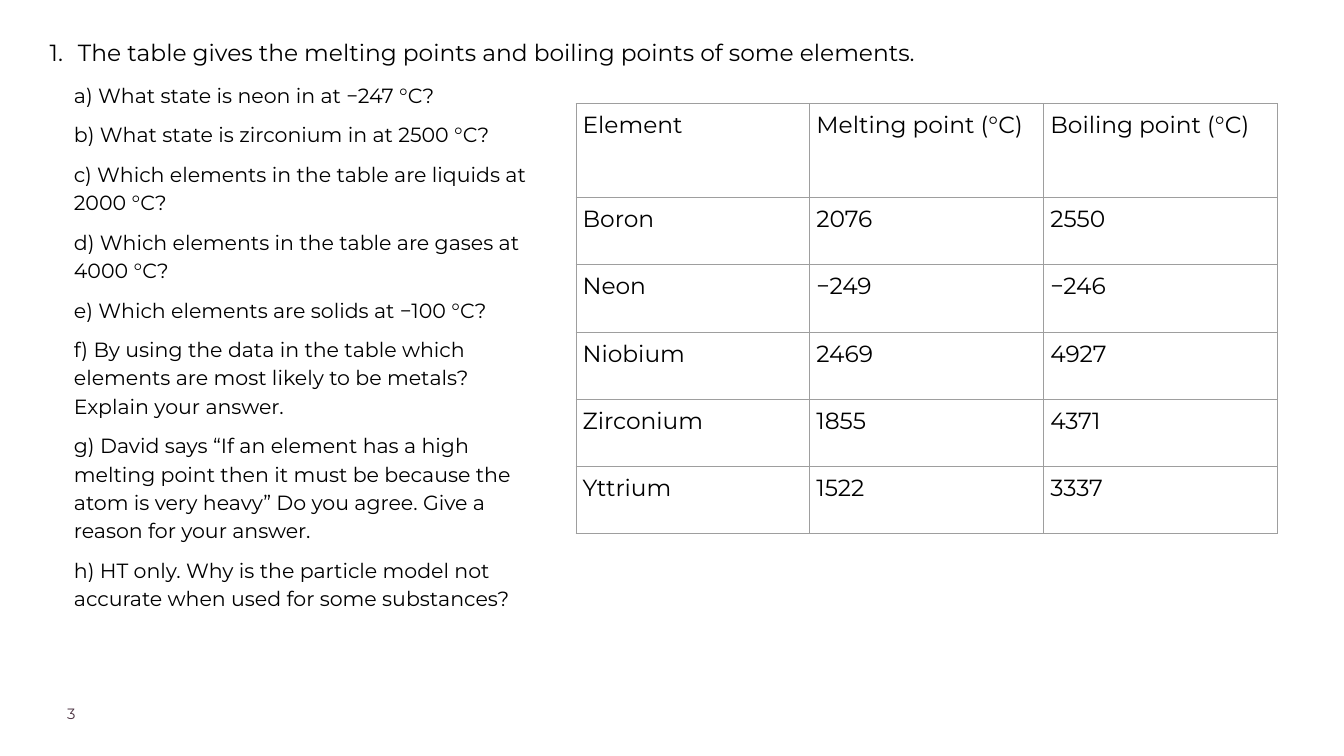
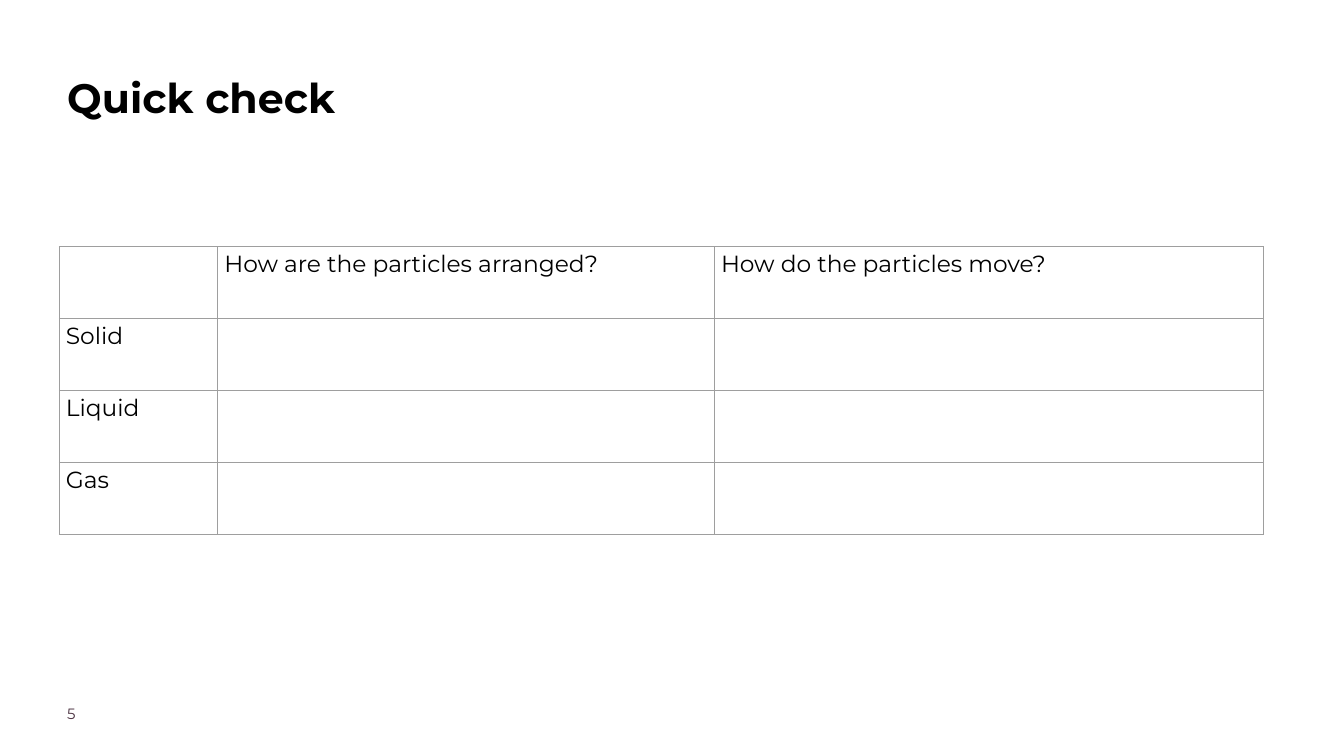
from lxml.etree import SubElement
from pptx import Presentation
from pptx.dml.color import RGBColor
from pptx.enum.text import MSO_ANCHOR, MSO_AUTO_SIZE, PP_ALIGN
from pptx.oxml import parse_xml
from pptx.oxml.ns import nsdecls, qn
from pptx.util import Inches, Pt

FONT = "Montserrat"
INK = "000000"
NUMBER_INK = "4B3241"
GRID = "9E9E9E"
TITLE_AND_LIST, TITLE_ONLY = 1, 5


def rgb(hex_color):
    return RGBColor.from_string(hex_color)


def set_bullet(paragraph, numbered):
    """Number the paragraph with a hanging indent, or clear its bullet."""
    props = paragraph._p.get_or_add_pPr()
    props.set("marL", str(Inches(0.5) if numbered else 0))
    props.set("indent", str(Inches(-0.42) if numbered else 0))
    if numbered:
        color = SubElement(props, qn("a:buClr"))
        SubElement(color, qn("a:srgbClr"), val=INK)
        SubElement(props, qn("a:buAutoNum"), type="arabicPeriod")
    else:
        SubElement(props, qn("a:buNone"))


def write(frame, *texts, size=25, color=INK, bold=False, spacing=1.0, gap=0,
          inset=0.1, numbered=False):
    """Fill a text frame with one paragraph per text."""
    frame.word_wrap = True
    frame.vertical_anchor = MSO_ANCHOR.TOP
    frame.margin_left = frame.margin_right = Inches(inset)
    frame.margin_top = frame.margin_bottom = Inches(inset)
    for index, text in enumerate(texts):
        paragraph = frame.add_paragraph() if index else frame.paragraphs[0]
        set_bullet(paragraph, numbered)
        paragraph.alignment = PP_ALIGN.LEFT
        paragraph.line_spacing = spacing
        paragraph.space_before = Pt(gap if index else 0)
        paragraph.space_after = Pt(0)
        run = paragraph.add_run()
        run.text = text
        run.font.name = FONT
        run.font.size = Pt(size)
        run.font.bold = bold
        run.font.color.rgb = rgb(color)


def outline(cell):
    """Draw a thin line on all four sides of a table cell."""
    props = cell._tc.get_or_add_tcPr()
    for position, side in enumerate(("lnL", "lnR", "lnT", "lnB")):
        props.insert(position, parse_xml(
            f'<a:{side} {nsdecls("a")} w="{Pt(0.75)}"><a:solidFill>'
            f'<a:srgbClr val="{GRID}"/></a:solidFill></a:{side}>'))


class Worksheet:
    """A deck of worksheet slides in one style."""

    def __init__(self):
        self.deck = Presentation()
        self.deck.slide_width = Inches(20)
        self.deck.slide_height = Inches(11.25)
        self.slide = None

    def add_slide(self, layout, number):
        self.slide = self.deck.slides.add_slide(self.deck.slide_layouts[layout])
        box = self.slide.shapes.add_textbox(
            Inches(1), Inches(10.48), Inches(1.57), Inches(0.39))
        write(box.text_frame, str(number), size=16, color=NUMBER_INK, inset=0)

    def fill_placeholder(self, index, left, top, width, height, *texts, **style):
        holder = self.slide.placeholders[index]
        holder.left, holder.top = Inches(left), Inches(top)
        holder.width, holder.height = Inches(width), Inches(height)
        holder.text_frame.auto_size = MSO_AUTO_SIZE.NONE
        write(holder.text_frame, *texts, spacing=1.15, **style)

    def title(self, *place_and_text, **style):
        self.fill_placeholder(0, *place_and_text, **style)

    def questions(self, *place_and_texts):
        self.fill_placeholder(1, *place_and_texts, size=22, gap=12)

    def table(self, left, top, widths, heights, rows, spacing=1.0):
        grid = self.slide.shapes.add_table(
            len(rows), len(widths), Inches(left), Inches(top),
            Inches(sum(widths)), Inches(sum(heights))).table
        grid.first_row = grid.horz_banding = False
        for column, width in zip(grid.columns, widths):
            column.width = Inches(width)
        for row, height, texts in zip(grid.rows, heights, rows):
            row.height = Inches(height)
            for cell, text in zip(row.cells, texts):
                cell.fill.background()
                outline(cell)
                if text:
                    write(cell.text_frame, text, spacing=spacing)


def melting_points(sheet):
    sheet.add_slide(TITLE_AND_LIST, 3)
    sheet.questions(
        1, 1.08, 7.19, 8.3,
        "a) What state is neon in at −247 °C?",
        "b) What state is zirconium in at 2500 °C?",
        "c) Which elements in the table are liquids at 2000 °C?",
        "d) Which elements in the table are gases at 4000 °C?",
        "e) Which elements are solids at −100 °C?",
        "f) By using the data in the table which elements are most likely to be "
        "metals? Explain your answer.",
        "g) David says “If an element has a high melting point then it must be "
        "because the atom is very heavy” Do you agree. Give a reason for your answer.",
        "h) HT only. Why is the particle model not accurate when used for some "
        "substances?")
    sheet.title(
        0.56, 0.4, 16.6, 1.14,
        "The table gives the melting points and boiling points of some elements.",
        numbered=True)
    elements = [
        ("Element", "Melting point (°C)", "Boiling point (°C)"),
        ("Boron", "2076", "2550"),
        ("Neon", "−249", "−246"),
        ("Niobium", "2469", "4927"),
        ("Zirconium", "1855", "4371"),
        ("Yttrium", "1522", "3337"),
    ]
    sheet.table(8.57, 1.54, [3.48] * 3, [1.4] + [1] * 5, elements, spacing=1.15)


def quick_check(sheet):
    sheet.add_slide(TITLE_ONLY, 5)
    sheet.title(1, 0.97, 14.44, 1.78, "Quick check", size=44, bold=True, inset=0)
    states = [("", "How are the particles arranged?", "How do the particles move?")]
    states += [(state, "", "") for state in ("Solid", "Liquid", "Gas")]
    sheet.table(0.88, 3.67, [2.36, 7.39, 8.17], [1.07] * 4, states)


def main():
    sheet = Worksheet()
    melting_points(sheet)
    quick_check(sheet)
    sheet.deck.save("out.pptx")


if __name__ == "__main__":
    main()
